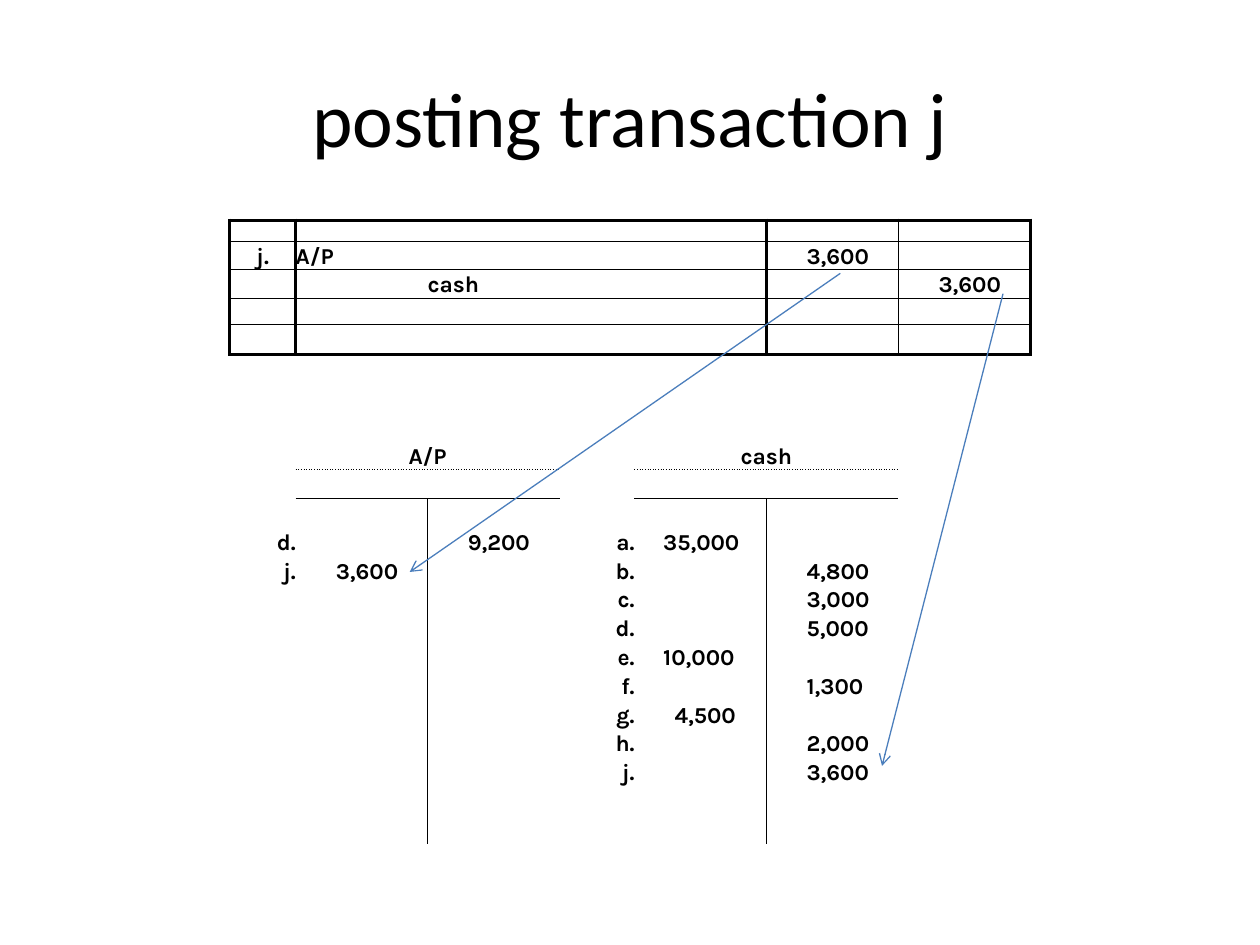
from lxml import etree
from pptx import Presentation
from pptx import util as u
from pptx.dml.color import RGBColor
from pptx.enum import shapes, text
from pptx.oxml import ns

COLOURS = {"ink": "000000", "arrow": "4B7EBC"}
FONT = "Karla"
THICK, THIN = 2, 0.5
COLUMN_WIDTHS = [1.33, 2.66, 2.66, 1.51, 2.66, 2.66, 2.66]
ROW_HEIGHTS = [0.42, 0.58, 0.58, 0.52, 0.61] + [0.58] * 17
# Each side: border tag, then the neighbouring cell and its matching border
SIDES = {
    "left": ("a:lnL", 0, -1, "a:lnR"),
    "right": ("a:lnR", 0, 1, "a:lnL"),
    "top": ("a:lnT", -1, 0, "a:lnB"),
    "bottom": ("a:lnB", 1, 0, "a:lnT"),
}
CENTRE, LEFT, RIGHT = text.PP_ALIGN.CENTER, text.PP_ALIGN.LEFT, text.PP_ALIGN.RIGHT


def add_child(parent, tag, **attributes):
    return etree.SubElement(parent, ns.qn(tag), attributes)


def colour(name):
    return RGBColor.from_string(COLOURS[name])


def prepare_cell(cell):
    """Clear margins, borders and fill, and keep an empty cell low."""
    cell.margin_left = cell.margin_right = cell.margin_top = cell.margin_bottom = 0
    cell.vertical_anchor = text.MSO_ANCHOR.BOTTOM
    properties = cell._tc.get_or_add_tcPr()
    for tag in ("a:lnL", "a:lnR", "a:lnT", "a:lnB"):
        add_child(add_child(properties, tag, w="0"), "a:noFill")
    cell.fill.background()
    add_child(cell.text_frame.paragraphs[0]._p, "a:endParaRPr", sz="900")


def draw_border(table, row, column, side, width, dash="solid"):
    """Draw one edge, on the cell and on the neighbour sharing it."""
    tag, down, across, opposite = SIDES[side]
    for r, c, name in ((row, column, tag), (row + down, column + across, opposite)):
        if not (0 <= r < len(ROW_HEIGHTS) and 0 <= c < len(COLUMN_WIDTHS)):
            continue
        line = table.cell(r, c)._tc.tcPr.find(ns.qn(name))
        for child in list(line):
            line.remove(child)
        line.set("w", str(int(u.Pt(width))))
        add_child(add_child(line, "a:solidFill"), "a:srgbClr", val=COLOURS["ink"])
        add_child(line, "a:prstDash", val=dash)


def write_cell(cell, words, alignment=LEFT, indent=0):
    cell.margin_left = u.Cm(indent)
    paragraph = cell.text_frame.paragraphs[0]
    paragraph.alignment = alignment
    run = paragraph.add_run()
    run.text = words
    run.font.name, run.font.size, run.font.bold = FONT, u.Pt(13), True
    run.font.color.rgb = colour("ink")


def write_amount(cell, amount):
    write_cell(cell, f"{amount:,}", indent=0.58 if amount >= 10000 else 0.81)


def add_title(slide, left, top, width, height):
    title = slide.shapes.title
    title.left, title.top = u.Cm(left), u.Cm(top)
    title.width, title.height = u.Cm(width), u.Cm(height)
    paragraph = title.text_frame.paragraphs[0]
    paragraph.alignment = CENTRE
    run = paragraph.add_run()
    run.text = "posting transaction j"
    run.font.name, run.font.size = "Calibri", u.Pt(44)
    run.font.color.rgb = colour("ink")


def add_grid(slide, left, top):
    frame = slide.shapes.add_table(
        len(ROW_HEIGHTS), len(COLUMN_WIDTHS), u.Cm(left), u.Cm(top),
        u.Cm(sum(COLUMN_WIDTHS)), u.Cm(sum(ROW_HEIGHTS)))
    table = frame.table
    table.first_row = table.horz_banding = False
    for column, width in zip(table.columns, COLUMN_WIDTHS):
        column.width = u.Cm(width)
    for row, height in zip(table.rows, ROW_HEIGHTS):
        row.height = u.Cm(height)
    for cell in table.iter_cells():
        prepare_cell(cell)
    return table


def fill_journal(table, top, row_count):
    """Journal entry with a ruled frame: letter, account, debit, credit."""
    last_row, last_column = top + row_count - 1, len(COLUMN_WIDTHS) - 1
    for row in range(top, last_row + 1):
        for column in range(last_column + 1):
            if row == top:
                draw_border(table, row, column, "top", THICK)
            draw_border(table, row, column, "bottom", THICK if row == last_row else THIN)
        draw_border(table, row, 0, "left", THICK)
        for column, width in ((0, THICK), (4, THICK), (5, THIN), (6, THICK)):
            draw_border(table, row, column, "right", width)
    debit, credit = top + 1, top + 2
    write_cell(table.cell(debit, 0), "j.", CENTRE)
    write_cell(table.cell(debit, 1), "A/P")
    write_amount(table.cell(debit, 5), 3600)
    write_cell(table.cell(credit, 2), "cash")
    write_amount(table.cell(credit, 6), 3600)


def fill_account(table, top, left, name, entries):
    """T-account: the letters stand in column left, debit and credit follow."""
    debit, credit = left + 1, left + 2
    for column in (debit, credit):
        draw_border(table, top, column, "bottom", THIN, "dot")
        draw_border(table, top + 1, column, "bottom", THIN)
    for row in range(top + 2, len(ROW_HEIGHTS)):
        draw_border(table, row, debit, "right", THIN)
    table.cell(top, debit).merge(table.cell(top, credit))
    write_cell(table.cell(top, debit), name, CENTRE)
    for row, (letter, side, amount) in enumerate(entries, top + 3):
        write_cell(table.cell(row, left), letter + ".", RIGHT)
        write_amount(table.cell(row, debit if side == "debit" else credit), amount)


def add_arrow(slide, start, end):
    connector = slide.shapes.add_connector(
        shapes.MSO_CONNECTOR.STRAIGHT, *(u.Cm(length) for length in start + end))
    connector.line.color.rgb = colour("arrow")
    connector.line.width = u.Pt(0.75)
    add_child(connector.line._get_or_add_ln(), "a:tailEnd", type="arrow")
    add_child(connector._element.spPr, "a:effectLst")


def main():
    presentation = Presentation()
    presentation.slide_width, presentation.slide_height = u.Cm(25.4), u.Cm(19.05)
    slide = presentation.slides.add_slide(presentation.slide_layouts[5])
    add_title(slide, 1.27, 0.76, 22.86, 3.18)

    # Journal above, ledger accounts below, on one grid
    table = add_grid(slide, 4.63, 4.44)
    fill_journal(table, 0, 5)
    fill_account(table, 8, 0, "A/P", [("d", "credit", 9200), ("j", "debit", 3600)])
    fill_account(table, 8, 3, "cash", [
        ("a", "debit", 35000), ("b", "credit", 4800), ("c", "credit", 3000),
        ("d", "credit", 5000), ("e", "debit", 10000), ("f", "credit", 1300),
        ("g", "debit", 4500), ("h", "credit", 2000), ("j", "credit", 3600)])

    # Posting arrows from journal to ledger
    add_arrow(slide, (16.94, 5.51), (8.26, 11.53))
    add_arrow(slide, (20.22, 5.92), (17.78, 15.44))
    presentation.save("out.pptx")


if __name__ == "__main__":
    main()
